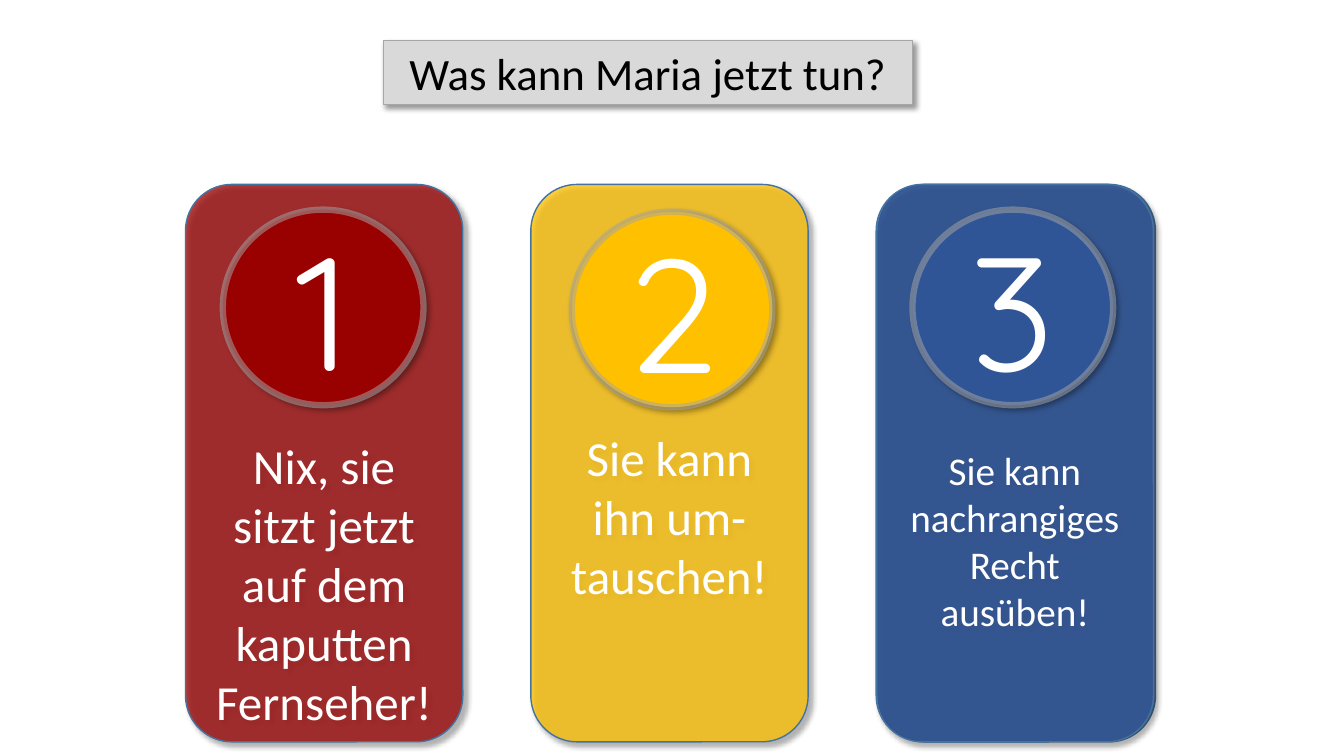
from pptx import Presentation
from pptx import util as u
from pptx.dml.color import RGBColor
from pptx.enum import shapes, text
from pptx.oxml import parse_xml
from pptx.oxml.ns import nsdecls, qn

COLUMNS, ROWS = 133.3, 75
CARD_WIDTH, CARD_HEIGHT = 27.5, 55.3
CARD_LEFT, CARD_TOP, CARD_PITCH = 18.4, 18.3, 34.25
DISC_WIDTH, DISC_HEIGHT = 19.9, 19.4


def rgb(value):
    return RGBColor.from_string(value)


class Board:
    """Style and current slide; lengths are grid columns and rows."""

    body_font, digit_font = "Calibri", "Quicksand"
    white, black, grey, outline = "FFFFFF", "000000", "A6A6A6", "43739E"

    def __init__(self, deck):
        self.column = deck.slide_width / COLUMNS
        self.row = deck.slide_height / ROWS
        self.page = deck.slides.add_slide(deck.slide_layouts[5])

    def place(self, left, top, width, height):
        return (round(left * self.column), round(top * self.row),
                round(width * self.column), round(height * self.row))

    def paint(self, box, fill, line, weight, opacity=100, line_opacity=100, shadow=True):
        box.fill.solid()
        box.fill.fore_color.rgb = rgb(fill)
        box.line.color.rgb = rgb(line)
        box.line.width = u.Pt(weight)
        box.shadow.inherit = False
        properties = box.element.spPr
        for parent, share in ((properties, opacity), (properties.find(qn("a:ln")), line_opacity)):
            if share < 100:
                color = parent.find(qn("a:solidFill")).find(qn("a:srgbClr"))
                color.append(parse_xml(f'<a:alpha {nsdecls("a")} val="{share * 1000}"/>'))
        if shadow:
            properties.find(qn("a:effectLst")).append(parse_xml(
                f'<a:outerShdw {nsdecls("a")} blurRad="{u.Pt(4)}" dist="{u.Pt(3)}" dir="2700000" '
                'algn="tl" rotWithShape="0"><a:srgbClr val="000000"><a:alpha val="40000"/>'
                '</a:srgbClr></a:outerShdw>'))

    def label(self, box, words, size, font, color, anchor):
        frame = box.text_frame
        frame.text = words
        frame.word_wrap = True
        frame.auto_size = text.MSO_AUTO_SIZE.NONE
        frame.vertical_anchor = anchor
        para = frame.paragraphs[0]
        para.alignment = text.PP_ALIGN.CENTER
        span = para.runs[0]
        span.font.size = u.Pt(size)
        span.font.name = font
        span.font.color.rgb = rgb(color)

    def title(self, words, *area):
        box = self.page.shapes.title
        box.left, box.top, box.width, box.height = self.place(*area)
        self.paint(box, "D9D9D9", self.grey, 0.75)
        self.label(box, words, 32, self.body_font, self.black, text.MSO_ANCHOR.TOP)

    def panel(self, left, fill, shadow=True):
        box = self.page.shapes.add_shape(
            shapes.MSO_SHAPE.ROUNDED_RECTANGLE,
            *self.place(left, CARD_TOP, CARD_WIDTH, CARD_HEIGHT))
        self.paint(box, fill, self.outline, 1, opacity=75, shadow=shadow)
        return box

    def card(self, left, fill, words, size, text_drop):
        box = self.panel(left, fill)
        self.label(box, words, size, self.body_font, self.white, text.MSO_ANCHOR.TOP)
        box.text_frame.margin_top = round(text_drop * self.row)
        box.text_frame.margin_bottom = 0

    def disc(self, left, top, fill, digit):
        box = self.page.shapes.add_shape(
            shapes.MSO_SHAPE.OVAL, *self.place(left, top, DISC_WIDTH, DISC_HEIGHT))
        self.paint(box, fill, self.grey, 4.5, line_opacity=53)
        self.label(box, digit, 115, self.digit_font, self.white, text.MSO_ANCHOR.MIDDLE)


def main():
    deck = Presentation()
    deck.slide_width, deck.slide_height = u.Inches(13.33), u.Inches(7.5)
    board = Board(deck)

    # Question
    board.title("Was kann Maria jetzt tun?", 38, 4, 52.5, 6.4)

    # Second layer that deepens the blue card
    board.panel(CARD_LEFT + 2 * CARD_PITCH + 0.2, "2F5597", shadow=False)

    # Answers: colour, words, size, text drop, disc left and top
    answers = [
        ("990000", "Nix, sie sitzt jetzt auf dem kaputten Fernseher!", 35, 23.6, 22.1, 20.8),
        ("FFC000", "Sie kann ihn um-tauschen!", 35, 22.8, 56.7, 21),
        ("2F5597", "Sie kann nachrangiges Recht ausüben!", 28, 24.6, 90.5, 20.8),
    ]
    for index, (fill, words, size, drop, disc_left, disc_top) in enumerate(answers):
        board.card(CARD_LEFT + index * CARD_PITCH, fill, words, size, drop)
        board.disc(disc_left, disc_top, fill, str(index + 1))

    deck.save("out.pptx")


if __name__ == "__main__":
    main()
